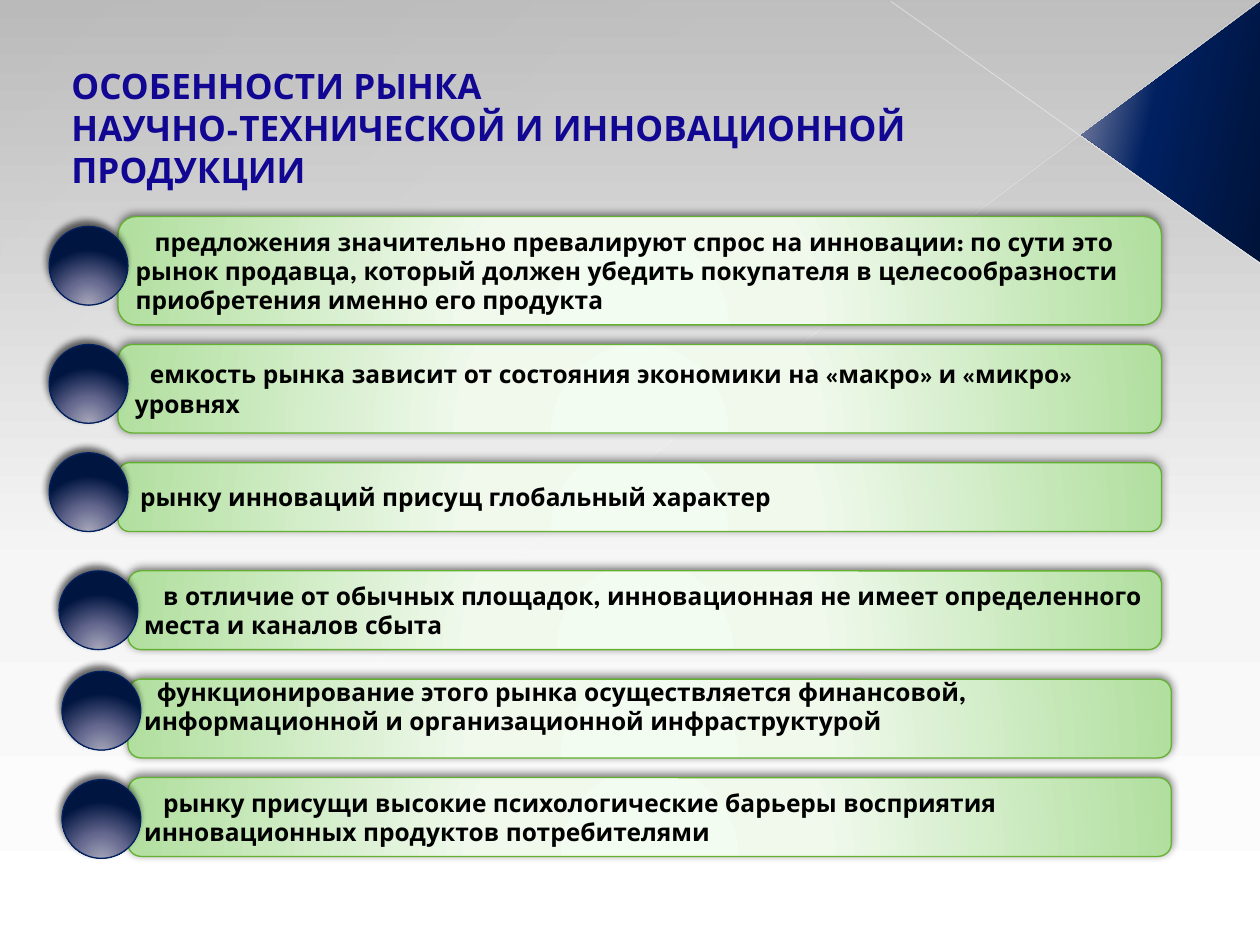
from lxml import etree
from pptx import Presentation
from pptx.dml.color import RGBColor
from pptx.enum.shapes import MSO_CONNECTOR, MSO_SHAPE as SHAPE
from pptx.enum.text import MSO_ANCHOR, PP_ALIGN
from pptx.oxml.ns import qn
from pptx.util import Inches, Pt

UNIT = 10 / 128  # the slide is a grid of 128 columns by 96 rows
FONT = "League Spartan"
BAR_STOPS = [(0, "F3FCF0"), (34, "F0F9EC"), (100, "B1DF9F")]
DISC_STOPS = [(0, "A8A9BA"), (46, "65688F"), (100, "001540")]
TITLE = "ОСОБЕННОСТИ РЫНКА\vНАУЧНО-ТЕХНИЧЕСКОЙ И ИННОВАЦИОННОЙ ПРОДУКЦИИ"

# bar (left, top, right, rows), disc (left, top, rotation),
# first-line indent and bottom inset in inches, text
FEATURES = [
    ((12, 22, 118, 11), (5, 23, 0), 0.15, 0.05,
     "предложения значительно превалируют спрос на инновации: по сути это рынок "
     "продавца, который должен убедить покупателя в целесообразности "
     "приобретения именно его продукта"),
    ((12, 35, 118, 9), (5, 35, 0), 0.12, 0.05,
     "емкость рынка зависит от состояния экономики на «макро» и «микро» уровнях"),
    ((12, 47, 118, 7), (5, 46, 0), 0.05, 0.05,
     "рынку инноваций присущ глобальный характер"),
    ((13, 58, 118, 8), (6, 58, 0), 0.15, 0.05,
     "в отличие от обычных площадок, инновационная не имеет определенного места "
     "и каналов сбыта"),
    ((13, 69, 119, 8), (6.3, 68.2, 356), 0.1, 0.24,
     "функционирование этого рынка осуществляется финансовой, информационной и "
     "организационной инфраструктурой"),
    ((13, 79, 119, 8), (6.3, 79.2, 356), 0.15, 0.05,
     "рынку присущи высокие психологические барьеры восприятия инновационных "
     "продуктов потребителями"),
]


def rgb(value):
    return RGBColor.from_string(value)


def grid(*cells):
    return [Inches(c * UNIT) for c in cells]


def add(parent, tag, **attrs):
    return etree.SubElement(parent, qn(tag), {k: str(v) for k, v in attrs.items()})


def add_color(parent, color, alpha=100):
    clr = add(parent, "a:srgbClr", val=color)
    if alpha < 100:
        add(clr, "a:alpha", val=alpha * 1000)


def gradient(owner, element, stops, angle=None):
    """Fill with (position, colour[, alpha]) stops: linear, or radial without an angle."""
    owner.fill.solid()
    solid = element.find(".//" + qn("a:solidFill"))
    grad = etree.Element(qn("a:gradFill"), rotWithShape="1")
    gs_list = add(grad, "a:gsLst")
    for pos, *color in stops:
        add_color(add(gs_list, "a:gs", pos=pos * 1000), *color)
    if angle is None:
        path = add(grad, "a:path", path="circle")
        add(path, "a:fillToRect", l=50000, t=155000, r=50000, b=-55000)
    else:
        add(grad, "a:lin", ang=angle * 60000, scaled=0)
    solid.getparent().replace(solid, grad)


def shadow(sp, alpha, blur, dist):
    sp.shadow.inherit = False
    effects = sp._element.spPr.find(qn("a:effectLst"))
    outer = add(effects, "a:outerShdw", blurRad=Pt(blur), dist=Pt(dist),
                dir=245 * 60000, algn="tl", rotWithShape=0)
    add_color(outer, "000000", alpha)


def add_shape(s, kind, box, stops, angle=None, line=None):
    sp = s.shapes.add_shape(kind, *box)
    sp.shadow.inherit = False
    gradient(sp, sp._element.spPr, stops, angle)
    if line:
        sp.line.color.rgb = rgb(line)
        sp.line.width = Pt(0.75)
    else:
        sp.line.fill.background()
    return sp


def flip_vertical(sp):
    sp._element.spPr.find(qn("a:xfrm")).set("flipV", "1")


def write(sp, text, size, color, bottom):
    tf = sp.text_frame
    tf.word_wrap = True
    tf.vertical_anchor = MSO_ANCHOR.MIDDLE
    tf.margin_bottom = Inches(bottom)
    p = tf.paragraphs[0]
    p.text = text
    p.alignment = PP_ALIGN.LEFT
    p.font.name, p.font.size, p.font.bold = FONT, Pt(size), True
    p.font.color.rgb = rgb(color)
    return p


def add_ray(s, start, end, width, alpha):
    c = s.shapes.add_connector(MSO_CONNECTOR.STRAIGHT,
                               *(Inches(v) for v in (*start, *end)))
    c.line.color.rgb = rgb("FFFFFF")
    c.line.width = Pt(width)
    add(c._element.spPr.find(".//" + qn("a:srgbClr")), "a:alpha", val=alpha * 1000)
    add(c._element.spPr, "a:effectLst")


def add_backdrop(s):
    gradient(s.background, s.element,
             [(0, "B9B9B9"), (60, "F6F6F6"), (100, "FFFFFF")], 90)
    sheen = add_shape(s, SHAPE.RIGHT_TRIANGLE,
                      [Inches(v) for v in (0.01, 0.01, 9.98, 7.48)],
                      [(0, "FFFFFF", 10), (70, "FFFFFF", 8), (100, "FFFFFF", 1)], 133)
    flip_vertical(sheen)
    corner = add_shape(s, SHAPE.ISOSCELES_TRIANGLE,
                       [Inches(v) for v in (8.26, 0.34, 2.07, 1.42)],
                       [(0, "001339"), (60, "002060"), (100, "8F92AE")], 258)
    corner.adjustments[0] = 0.51
    corner.rotation = 90
    flip_vertical(corner)
    add_ray(s, (10, 2.09), (7.07, 0.01), 0.47, 45)
    add_ray(s, (0, 7.49), (9.99, 0.01), 0.39, 35)


def add_bar(s, place, indent, bottom, text):
    left, top, right, rows = place
    sp = add_shape(s, SHAPE.ROUNDED_RECTANGLE, grid(left, top, right - left, rows),
                   BAR_STOPS, line="64B030")
    shadow(sp, 50, 5, 2)
    p = write(sp, text, 14, "000000", bottom)
    p._p.get_or_add_pPr().set("indent", str(Inches(indent)))


def add_disc(s, left, top, rotation):
    sp = add_shape(s, SHAPE.OVAL, grid(left, top, 8, 8), DISC_STOPS, line="002060")
    sp.rotation = rotation
    shadow(sp, 60, 4, 3)


def main():
    prs = Presentation()
    prs.slide_width, prs.slide_height = grid(128, 96)
    s = prs.slides.add_slide(prs.slide_layouts[6])
    add_backdrop(s)
    title = s.shapes.add_textbox(*grid(6, 8, 101.4, 14.2))
    write(title, TITLE, 20, "110793", 0.38)
    for bar, _, indent, bottom, text in FEATURES:
        add_bar(s, bar, indent, bottom, text)
    for _, disc, *_ in FEATURES:
        add_disc(s, *disc)
    prs.save("out.pptx")


if __name__ == "__main__":
    main()
